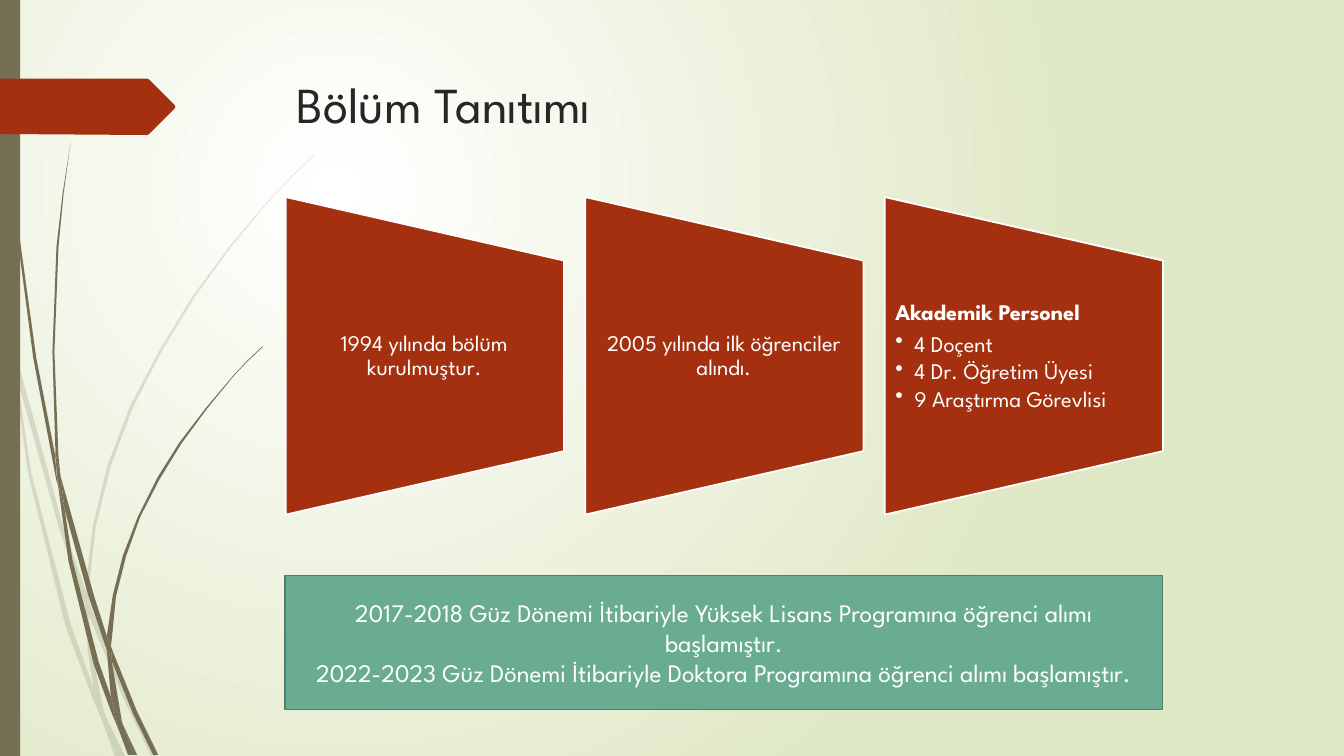
import dataclasses

import pptx
import pptx.dml.color
import pptx.enum.shapes
import pptx.enum.text
import pptx.oxml
import pptx.oxml.ns
import pptx.util
from pptx.util import Inches

SHAPE = pptx.enum.shapes.MSO_SHAPE
ALIGN = pptx.enum.text.PP_ALIGN
ANCHOR = pptx.enum.text.MSO_ANCHOR
NS = pptx.oxml.ns.nsdecls("a")
qn = pptx.oxml.ns.qn


@dataclasses.dataclass(frozen=True)
class Theme:
    font: str = "League Spartan"
    title_size: int = 36
    panel_size: int = 16
    banner_size: int = 18
    ink: str = "262626"
    white: str = "FFFFFF"
    backdrop: str = "DFE8C4"
    stem: str = "766F54"
    red: str = "A53010"
    green: str = "6AAC91"
    green_edge: str = "4E7F6B"
    line_width: float = 1.25


# Grass blades: each piece is a list of outline points, in inches
PALE_GRASS = [
    [(.11, 3.5), (.09, 3.22), (0, 2.82), (0, 2.99), (.1, 3.44)],
    [(.58, 5.22), (.84, 5.99), (.85, 5.86), (.62, 5.2), (.14, 3.45), (.17, 3.76)],
    [(.92, 6.07), (.88, 5.96), (.88, 6.1), (1.23, 6.94), (1.5, 7.5), (1.55, 7.5), (1.27, 6.92)],
    [(1.19, 7.5), (1.24, 7.5), (1.05, 7.11)],
    [(.93, 6.83), (.7, 6.19), (.31, 4.69), (.17, 3.76), (.11, 3.5), (.28, 4.7), (.65, 6.21),
     (.92, 6.93), (1.01, 7.14), (.99, 7.07)],
    [(.84, 5.99), (.87, 6.46), (.93, 6.83), (.96, 6.92), (1.05, 7.11), (1.03, 7.06), (.91, 6.46),
     (.88, 6.1), (.88, 6.08)],
    [(.88, 5.84), (.95, 5.22), (1.1, 4.62), (1.32, 4.04), (1.6, 3.49), (1.93, 2.95), (2.29, 2.45),
     (2.68, 1.98), (2.9, 1.75), (3.12, 1.54), (3.12, 1.53), (2.89, 1.75), (2.68, 1.97),
     (2.28, 2.44), (1.91, 2.94), (1.58, 3.48), (1.29, 4.03), (1.07, 4.61), (.92, 5.22),
     (.85, 5.84), (.85, 5.86), (.88, 5.96)],
    [(1.01, 7.14), (1.14, 7.5), (1.19, 7.5)],
    [(.88, 6.08), (.88, 6.1), (.88, 5.96), (.85, 5.86), (.84, 5.99)],
    [(.96, 6.92), (.93, 6.83), (.99, 7.07), (1.01, 7.14), (1.19, 7.5), (1.05, 7.11)],
]
DARK_GRASS = [
    [(.07, 1.1), (.17, 2.33), (.33, 3.55), (.56, 4.77), (.57, 4.81), (.55, 4.57), (.55, 4.53),
     (.36, 3.55), (.19, 2.32), (.08, 1.09), (.05, .48), (.04, 0), (.03, 0), (.04, .48)],
    [(.88, 5.92), (1.06, 6.45), (1.06, 6.31), (.93, 5.9), (.6, 4.72), (.64, 5.05)],
    [(1.13, 6.49), (1.1, 6.41), (1.11, 6.56), (1.32, 7.08), (1.52, 7.49), (1.57, 7.49), (1.36, 7.06)],
    [(1.1, 6.91), (.98, 6.57), (.72, 5.56), (.64, 5.05), (.57, 4.77), (.68, 5.57), (.93, 6.59),
     (1.11, 7.08), (1.17, 7.22), (1.16, 7.17)],
    [(.6, 4.72), (.58, 4.53), (.54, 3.49), (.58, 2.45), (.63, 1.93), (.7, 1.41), (.62, 1.93),
     (.56, 2.45), (.52, 3.49), (.55, 4.49)],
    [(1.33, 7.49), (1.36, 7.49), (1.22, 7.19)],
    [(.57, 4.77), (.64, 5.05), (.6, 4.72), (.55, 4.49), (.55, 4.53)],
    [(1.11, 6.33), (1.15, 5.92), (1.25, 5.52), (1.39, 5.13), (1.58, 4.76), (1.8, 4.4), (2.05, 4.06),
     (2.31, 3.74), (2.45, 3.59), (2.61, 3.44), (2.6, 3.44), (2.45, 3.58), (2.31, 3.73),
     (2.04, 4.05), (1.78, 4.39), (1.56, 4.74), (1.37, 5.12), (1.22, 5.51), (1.12, 5.9),
     (1.06, 6.31), (1.1, 6.41)],
    [(1.17, 7.22), (1.27, 7.49), (1.31, 7.49)],
    [(1.06, 6.45), (1.1, 6.91), (1.16, 7.06), (1.22, 7.19), (1.21, 7.16), (1.11, 6.56), (1.09, 6.51)],
    [(1.06, 6.45), (1.09, 6.51), (1.11, 6.56), (1.1, 6.41), (1.06, 6.31)],
    [(1.16, 7.06), (1.1, 6.91), (1.16, 7.17), (1.17, 7.22), (1.3, 7.49), (1.33, 7.49), (1.22, 7.19)],
]
TAG = [(0, .78), (1.46, .78), (1.48, .79), (1.73, 1.04), (1.74, 1.06), (1.73, 1.08),
       (1.48, 1.33), (1.46, 1.34), (0, 1.33)]

# Panels: heading, whether it is bold, bullet points
PANELS = [
    ("1994 yılında bölüm kurulmuştur.", False, []),
    ("2005 yılında ilk öğrenciler alındı.", False, []),
    ("Akademik Personel", True, ["4 Doçent", "4 Dr. Öğretim Üyesi", "9 Araştırma Görevlisi"]),
]
PANEL_LEFT, PANEL_PITCH = 2.83, 2.97
BANNER = [
    "2017-2018 Güz Dönemi İtibariyle Yüksek Lisans Programına öğrenci alımı başlamıştır.",
    "2022-2023 Güz Dönemi İtibariyle Doktora Programına öğrenci alımı başlamıştır.",
]


class SlideBuilder:
    def __init__(self, slide, theme):
        self.s, self.theme = slide, theme

    def rgb(self, value):
        return pptx.dml.color.RGBColor.from_string(value)

    def style(self, sp, fill, line=None):
        sp.shadow.inherit = False
        sp.fill.solid()
        sp.fill.fore_color.rgb = self.rgb(fill)
        if line:
            sp.line.color.rgb = self.rgb(line)
            sp.line.width = pptx.util.Pt(self.theme.line_width)
        else:
            sp.line.fill.background()
        return sp

    def background(self):
        fill = self.s.background.fill
        fill.gradient()
        for stop, color in zip(fill.gradient_stops, (self.theme.white, self.theme.backdrop)):
            stop.color.rgb = self.rgb(color)
        grad = self.s.element.find(".//" + qn("a:gradFill"))
        grad.remove(grad.find(qn("a:lin")))
        grad.append(pptx.oxml.parse_xml(
            f'<a:path {NS} path="circle">'
            '<a:fillToRect l="50000" t="50000" r="100000" b="100000"/></a:path>'))

    def outline(self, shapes, points, fill, opacity=None):
        start, *rest = [(Inches(x), Inches(y)) for x, y in points]
        builder = shapes.build_freeform(*start)
        builder.add_line_segments(rest, close=True)
        sp = self.style(builder.convert_to_shape(), fill)
        if opacity:
            color = sp.element.spPr.find(".//" + qn("a:srgbClr"))
            color.append(pptx.oxml.parse_xml(f'<a:alpha {NS} val="{opacity * 1000}"/>'))

    def grass(self, pieces, opacity=None):
        group = self.s.shapes.add_group_shape()
        for points in pieces:
            self.outline(group.shapes, points, self.theme.stem, opacity)

    def box(self, shapes, kind, x, y, w, h, fill, line=None):
        sp = shapes.add_shape(kind, Inches(x), Inches(y), Inches(w), Inches(h))
        return self.style(sp, fill, line)

    def paragraph(self, tf, text, size, color, align=ALIGN.LEFT, bold=False):
        p = tf.paragraphs[0] if not tf.paragraphs[0].runs else tf.add_paragraph()
        p.alignment = align
        r = p.add_run()
        r.text = text
        r.font.name, r.font.size, r.font.bold = self.theme.font, pptx.util.Pt(size), bold
        r.font.color.rgb = self.rgb(color)
        return p

    def bullet(self, p):
        p.level = 1
        pPr = p._p.get_or_add_pPr()
        pPr.set("marL", str(Inches(.19)))
        pPr.set("indent", str(-Inches(.19)))
        pPr.append(pptx.oxml.parse_xml(f'<a:buChar {NS} char="•"/>'))

    def title(self, text):
        sp = self.s.shapes.title
        sp.left, sp.top, sp.width, sp.height = map(Inches, (2.84, .68, 9.75, 1.4))
        tf = sp.text_frame
        tf.vertical_anchor = ANCHOR.TOP
        tf.auto_size = pptx.enum.text.MSO_AUTO_SIZE.NONE
        self.paragraph(tf, text, self.theme.title_size, self.theme.ink)

    def panel(self, shapes, x, heading, bold, points):
        t = self.theme
        sp = self.box(shapes, SHAPE.FLOWCHART_MANUAL_OPERATION, x - .19, 2.15, 3.15, 2.76,
                      t.red, t.white)
        sp.rotation = 270
        tf = shapes.add_textbox(Inches(x), Inches(2.59), Inches(2.76), Inches(1.89)).text_frame
        tf.word_wrap, tf.vertical_anchor = True, ANCHOR.MIDDLE
        tf.margin_left = tf.margin_right = Inches(.11)
        tf.margin_top = tf.margin_bottom = 0
        align = ALIGN.LEFT if points else ALIGN.CENTER
        p = self.paragraph(tf, heading, t.panel_size, t.white, align, bold)
        p.line_spacing, p.space_after = .9, pptx.util.Pt(.35 * t.panel_size)
        for point in points:
            p = self.paragraph(tf, point, t.panel_size, t.white)
            p.line_spacing, p.space_after = .9, pptx.util.Pt(.15 * t.panel_size)
            self.bullet(p)

    def banner(self, lines):
        t = self.theme
        sp = self.box(self.s.shapes, SHAPE.RECTANGLE, 2.83, 5.71, 8.7, 1.33, t.green, t.green_edge)
        tf = sp.text_frame
        tf.word_wrap, tf.vertical_anchor = True, ANCHOR.MIDDLE
        for line in lines:
            self.paragraph(tf, line, t.banner_size, t.white, ALIGN.CENTER)


def main():
    prs = pptx.Presentation()
    prs.slide_width, prs.slide_height = Inches(13.33), Inches(7.5)
    theme = Theme()
    b = SlideBuilder(prs.slides.add_slide(prs.slide_layouts[5]), theme)

    # Backdrop and decoration
    b.background()
    b.grass(PALE_GRASS, opacity=20)
    b.grass(DARK_GRASS)
    b.box(b.s.shapes, SHAPE.RECTANGLE, 0, 0, .2, 7.5, theme.stem)
    b.outline(b.s.shapes, TAG, theme.red)

    # Content
    b.title("Bölüm Tanıtımı")
    panels = b.s.shapes.add_group_shape()
    for i, (heading, bold, points) in enumerate(PANELS):
        b.panel(panels.shapes, PANEL_LEFT + i * PANEL_PITCH, heading, bold, points)
    b.banner(BANNER)

    prs.save("out.pptx")


if __name__ == "__main__":
    main()
